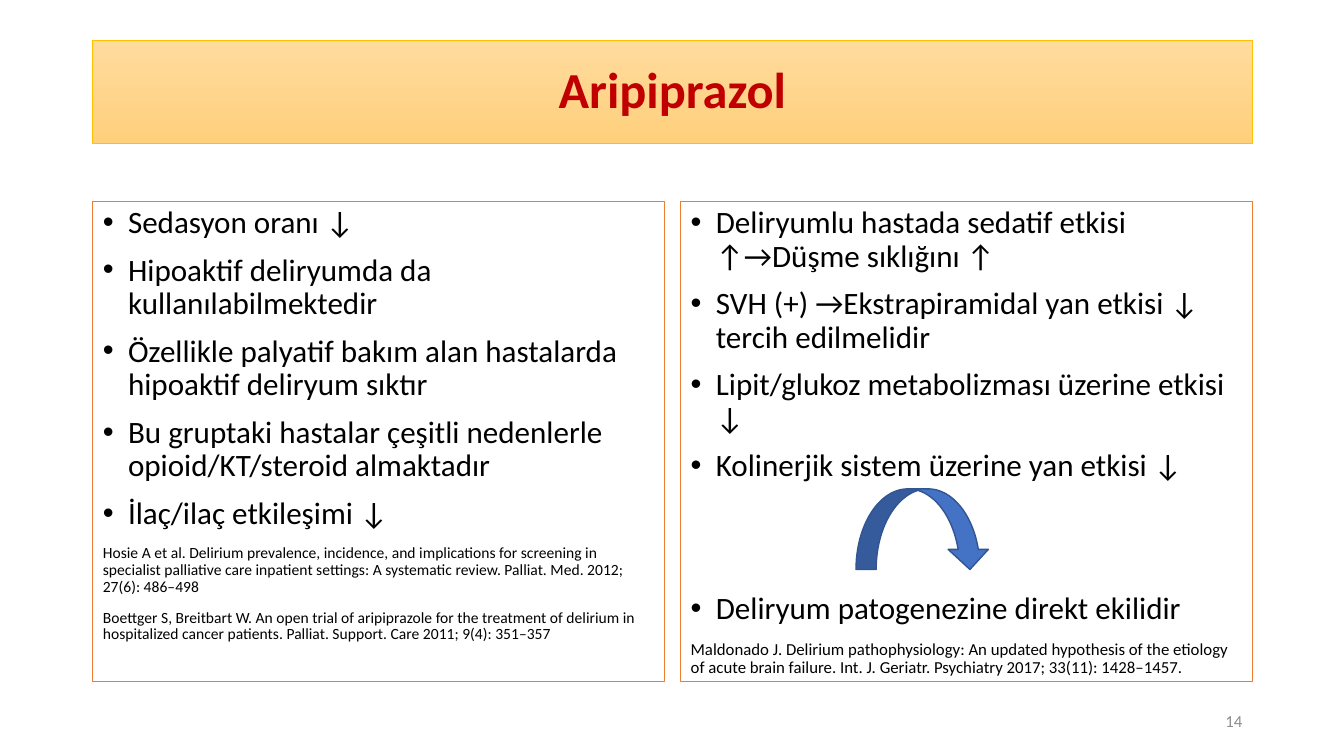
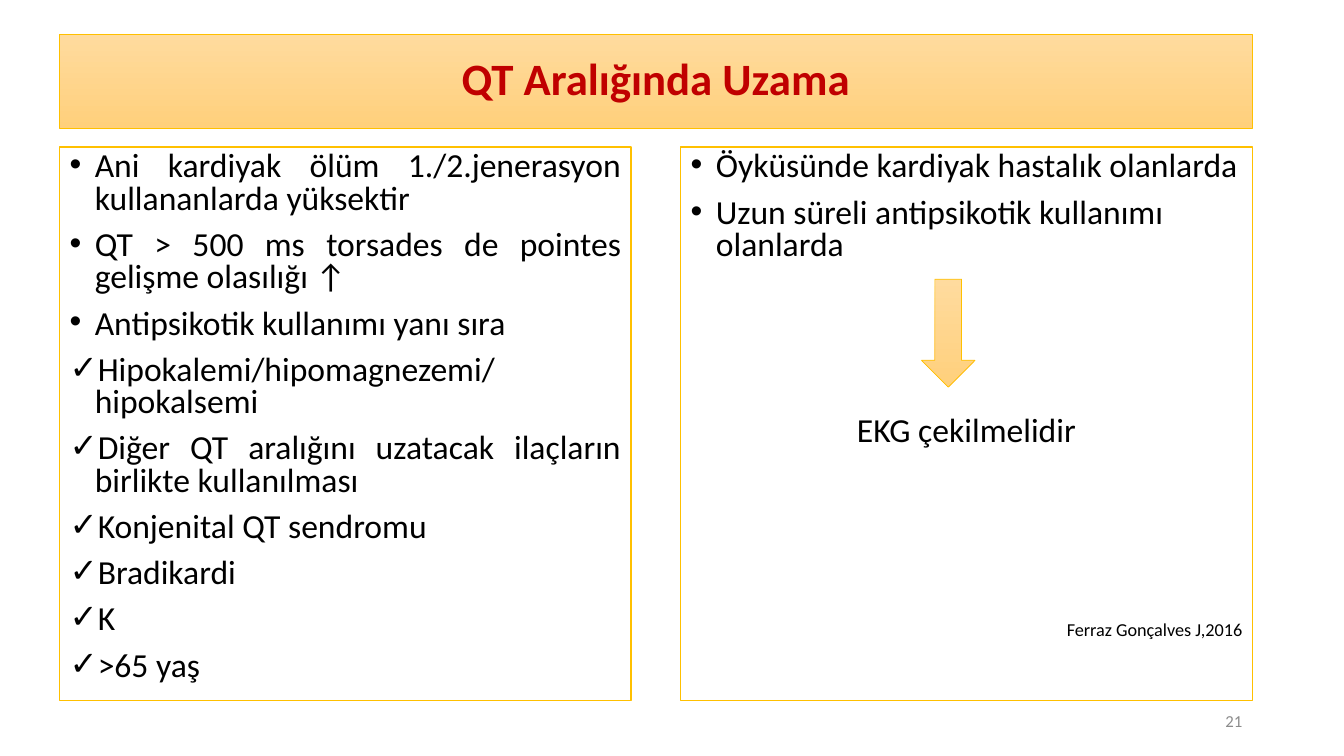
import pptx
import pptx.util
import pptx.dml.color
import pptx.enum.shapes
import pptx.enum.text
from dataclasses import dataclass
from lxml import etree

Inches = pptx.util.Inches
Pt = pptx.util.Pt
ALIGN = pptx.enum.text.PP_ALIGN
SHAPES = pptx.enum.shapes.MSO_SHAPE
MIDDLE = pptx.enum.text.MSO_ANCHOR.MIDDLE


@dataclass(frozen=True)
class Theme:
    font: str = "Calibri"
    title: str = "C00000"
    text: str = "000000"
    muted: str = "8C8C8C"
    panel: str = "FFFFFF"
    gold: str = "FFC000"
    orange: str = "ED7D31"
    blue: str = "4472C4"
    blue_line: str = "325491"
    band_top: str = "FFDB9E"
    band_bottom: str = "FFD07C"
    number_size: float = 12
    thin: float = 0.5
    line: float = 1


THEME = Theme()
RIGHT_EDGE = 12.42
PANEL_WIDTH = 5.67
INDENT = 0.25
SPACE = 10

SLIDES = [
    {
        "title": "Aripiprazol", "title_size": 36, "number": "14",
        "left": 0.92, "title_top": 0.4, "title_height": 1.02,
        "panel_top": 2, "panel_height": 4.76, "panel_line": THEME.orange,
        "size": 22.2, "spacing": 0.9,
        "panels": [
            [
                {"text": "Sedasyon oranı ↓", "bullet": "•"},
                {"text": "Hipoaktif deliryumda da kullanılabilmektedir", "bullet": "•"},
                {"text": "Özellikle palyatif bakım alan hastalarda hipoaktif deliryum sıktır", "bullet": "•"},
                {"text": "Bu gruptaki hastalar çeşitli nedenlerle opioid/KT/steroid almaktadır", "bullet": "•"},
                {"text": "İlaç/ilaç etkileşimi ↓", "bullet": "•"},
                {"text": "Hosie A et al. Delirium prevalence, incidence, and implications for "
                         "screening in specialist palliative care inpatient settings: A systematic "
                         "review. Palliat. Med. 2012; 27(6): 486–498", "size": 11.1},
                {"text": "Boettger S, Breitbart W. An open trial of aripiprazole for the treatment "
                         "of delirium in hospitalized cancer patients. Palliat. Support. Care 2011; "
                         "9(4): 351–357", "size": 11.1},
            ],
            [
                {"text": "Deliryumlu hastada sedatif etkisi ↑→Düşme sıklığını ↑", "bullet": "•"},
                {"text": "SVH (+) →Ekstrapiramidal yan etkisi ↓ tercih edilmelidir", "bullet": "•"},
                {"text": "Lipit/glukoz metabolizması üzerine etkisi ↓", "bullet": "•"},
                {"text": "Kolinerjik sistem üzerine yan etkisi ↓", "bullet": "•"},
                {"text": "Deliryum patogenezine direkt ekilidir", "bullet": "•", "before": 78},
                {"text": "Maldonado J. Delirium pathophysiology: An updated hypothesis of the "
                         "etiology of acute brain failure. Int. J. Geriatr. Psychiatry 2017; "
                         "33(11): 1428–1457.", "size": 12},
            ],
        ],
        "arrow": {"kind": SHAPES.CURVED_DOWN_ARROW, "box": (8.49, 4.85, 1.33, 0.8),
                  "fill": THEME.blue, "line": THEME.blue_line, "width": THEME.line},
    },
    {
        "title": "QT Aralığında Uzama", "title_size": 32, "number": "21",
        "left": 0.59, "title_top": 0.34, "title_height": 0.93,
        "panel_top": 1.46, "panel_height": 5.49, "panel_line": THEME.gold,
        "size": 24, "spacing": 0.8,
        "panels": [
            [
                {"text": text, "bullet": bullet, "align": ALIGN.JUSTIFY}
                for bullet, text in [
                    ("•", "Ani kardiyak ölüm 1./2.jenerasyon kullananlarda yüksektir"),
                    ("•", "QT > 500 ms torsades de pointes gelişme olasılığı ↑"),
                    ("•", "Antipsikotik kullanımı yanı sıra"),
                    ("✓", "Hipokalemi/hipomagnezemi/hipokalsemi"),
                    ("✓", "Diğer QT aralığını uzatacak ilaçların birlikte kullanılması"),
                    ("✓", "Konjenital QT sendromu"),
                    ("✓", "Bradikardi"),
                    ("✓", "K"),
                    ("✓", ">65 yaş"),
                ]
            ],
            [
                {"text": "Öyküsünde kardiyak hastalık olanlarda", "bullet": "•"},
                {"text": "Uzun süreli antipsikotik kullanımı olanlarda", "bullet": "•"},
                {"text": "EKG çekilmelidir", "align": ALIGN.CENTER, "before": 110},
                {"text": "Ferraz Gonçalves J,2016", "align": ALIGN.RIGHT,
                 "size": 13, "before": 124},
            ],
        ],
        "arrow": {"kind": SHAPES.DOWN_ARROW, "box": (9.14, 2.77, 0.53, 1.07),
                  "fill": None, "line": THEME.gold, "width": THEME.thin},
    },
]


def rgb(value):
    return pptx.dml.color.RGBColor.from_string(value)


def place(shape, left, top, width, height):
    shape.left, shape.top = Inches(left), Inches(top)
    shape.width, shape.height = Inches(width), Inches(height)


def paint(shape, fill, line, width):
    if fill:
        shape.fill.solid()
        shape.fill.fore_color.rgb = rgb(fill)
    else:
        shape.fill.gradient()
        shape.fill.gradient_angle = 270
        colors = (THEME.band_top, THEME.band_bottom)
        for position, (stop, color) in enumerate(zip(shape.fill.gradient_stops, colors)):
            stop.position = position
            stop.color.rgb = rgb(color)
    shape.line.color.rgb = rgb(line)
    shape.line.width = Pt(width)
    shape.shadow.inherit = False


def style(para, size, color, align, bold=False):
    para.alignment = align
    para.font.name = THEME.font
    para.font.size = Pt(size)
    para.font.bold = bold
    para.font.color.rgb = rgb(color)


def set_bullet(para, bullet):
    properties = para._p.get_or_add_pPr()
    indent = Inches(INDENT) if bullet else 0
    properties.set("marL", str(indent))
    properties.set("indent", str(-indent))
    tag = "a:buChar" if bullet else "a:buNone"
    mark = etree.SubElement(properties, pptx.oxml.ns.qn(tag))
    if bullet:
        mark.set("char", bullet)


def prepare(frame):
    frame.word_wrap = True
    frame.auto_size = pptx.enum.text.MSO_AUTO_SIZE.NONE


def add_title(page, content):
    title = page.shapes.title
    left = content["left"]
    place(title, left, content["title_top"], RIGHT_EDGE - left, content["title_height"])
    paint(title, None, THEME.gold, THEME.thin)
    prepare(title.text_frame)
    title.text_frame.vertical_anchor = MIDDLE
    title.text_frame.text = content["title"]
    para = title.text_frame.paragraphs[0]
    para.line_spacing = 0.9
    style(para, content["title_size"], THEME.title, ALIGN.CENTER, True)


def fill_panel(panel, left, items, content):
    place(panel, left, content["panel_top"], PANEL_WIDTH, content["panel_height"])
    paint(panel, THEME.panel, content["panel_line"], THEME.line)
    frame = panel.text_frame
    prepare(frame)
    for index, item in enumerate(items):
        para = frame.add_paragraph() if index else frame.paragraphs[0]
        para.text = item["text"]
        set_bullet(para, item.get("bullet"))
        para.line_spacing = content["spacing"]
        para.space_before = Pt(item.get("before", SPACE))
        style(para, item.get("size", content["size"]), THEME.text,
              item.get("align", ALIGN.LEFT))


def add_number(page, number):
    box = page.shapes.add_textbox(Inches(RIGHT_EDGE - 3), Inches(6.95), Inches(3), Inches(0.4))
    prepare(box.text_frame)
    box.text_frame.vertical_anchor = MIDDLE
    box.text_frame.text = number
    style(box.text_frame.paragraphs[0], THEME.number_size, THEME.muted, ALIGN.RIGHT)


def add_arrow(page, arrow):
    shape = page.shapes.add_shape(arrow["kind"], *map(Inches, arrow["box"]))
    paint(shape, arrow["fill"], arrow["line"], arrow["width"])


def main():
    deck = pptx.Presentation()
    deck.slide_width, deck.slide_height = Inches(13.33), Inches(7.5)
    for content in SLIDES:
        page = deck.slides.add_slide(deck.slide_layouts.get_by_name("Two Content"))
        add_title(page, content)
        lefts = (content["left"], RIGHT_EDGE - PANEL_WIDTH)
        for index, (left, items) in enumerate(zip(lefts, content["panels"]), 1):
            fill_panel(page.placeholders[index], left, items, content)
        add_number(page, content["number"])
        add_arrow(page, content["arrow"])
    deck.save("out.pptx")


if __name__ == "__main__":
    main()
